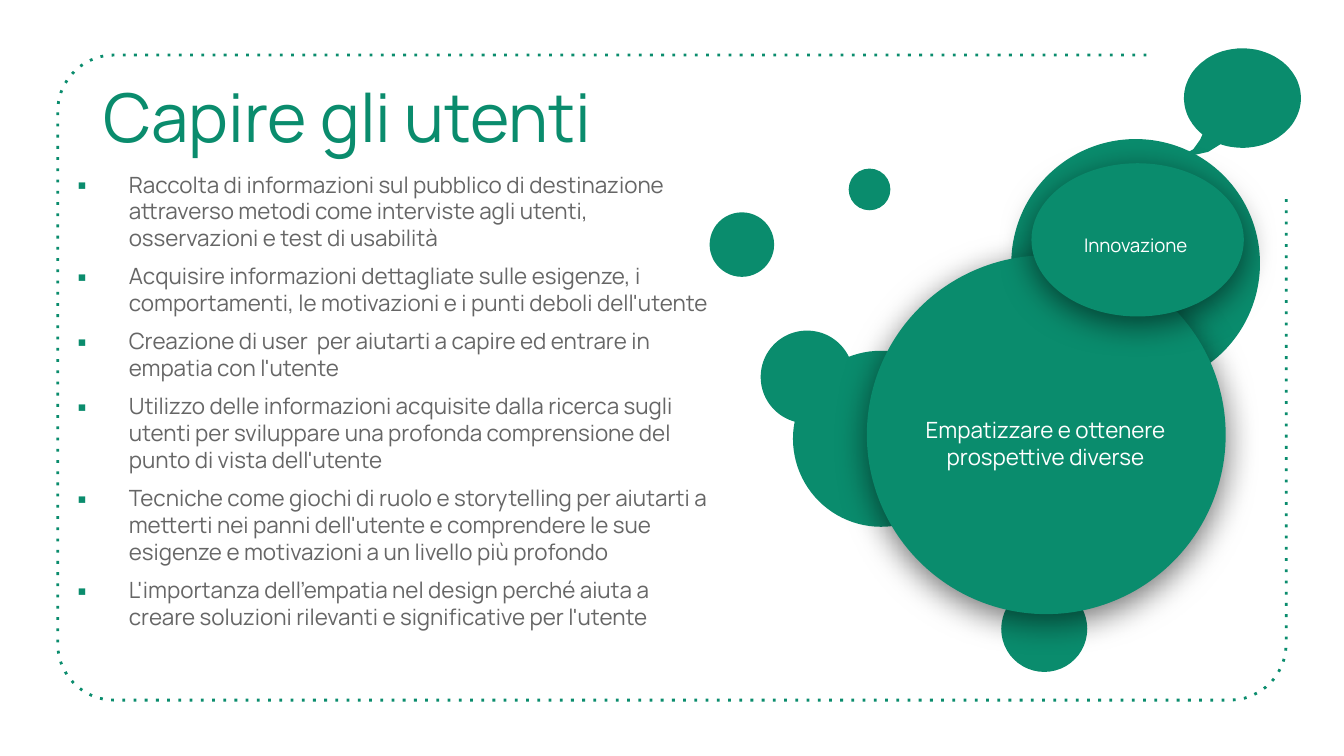
import math
import pptx
import pptx.dml.color
import pptx.enum.dml
import pptx.enum.shapes
import pptx.enum.text
import pptx.oxml
import pptx.oxml.ns
import pptx.util

Inches, Pt = pptx.util.Inches, pptx.util.Pt
Shape = pptx.enum.shapes.MSO_SHAPE
Align, Anchor = pptx.enum.text.PP_ALIGN, pptx.enum.text.MSO_ANCHOR
GREEN = pptx.dml.color.RGBColor(0x0A, 0x8C, 0x6D)
GREY = pptx.dml.color.RGBColor(0x66, 0x66, 0x66)
WHITE = pptx.dml.color.RGBColor(0xFF, 0xFF, 0xFF)
FONT = "Manrope"
NS = pptx.oxml.ns.nsdecls("a")

# Content
TITLE = "Capire gli utenti"
POINTS = [
    "Raccolta di informazioni sul pubblico di destinazione attraverso metodi come interviste agli utenti, osservazioni e test di usabilità",
    "Acquisire informazioni dettagliate sulle esigenze, i comportamenti, le motivazioni e i punti deboli dell'utente",
    "Creazione di user  per aiutarti a capire ed entrare in empatia con l'utente",
    "Utilizzo delle informazioni acquisite dalla ricerca sugli utenti per sviluppare una profonda comprensione del punto di vista dell'utente",
    "Tecniche come giochi di ruolo e storytelling per aiutarti a metterti nei panni dell'utente e comprendere le sue esigenze e motivazioni a un livello più profondo",
    "L'importanza dell'empatia nel design perché aiuta a creare soluzioni rilevanti e significative per l'utente",
]
# Plain circles: left, top, diameter, outlined
DOTS = [
    (7.45, 4.36, 0.64, False),
    (5.28, 1.58, 0.48, False),
    (5.9, 2.61, 1.31, False),
    (7.53, 1.04, 1.84, True),
    (5.66, 2.46, 0.69, False),
    (6.32, 1.26, 0.3, True),
]
# Raised ovals: box, label box, label, text size, outlined
OVALS = [
    ((6.45, 1.9, 2.67, 2.67), (6.76, 2.66, 2.04, 1.27),
     "Empatizzare e ottenere prospettive diverse", 12, False),
    ((7.68, 1.22, 1.57, 1.13), (7.85, 1.52, 1.2, 0.6),
     "Innovazione", 10, True),
]

# Widescreen slide, 16 to 9
deck = pptx.Presentation()
deck.slide_width = Inches(10)
deck.slide_height = deck.slide_width * 9 // 16
slide = deck.slides.add_slide(deck.slide_layouts[5])
shapes = slide.shapes


def write(shape, lines, size, color, align=Align.LEFT, anchor=Anchor.TOP, bullet=None):
    """Fill a shape with one paragraph per line of text."""
    frame = shape.text_frame
    frame.word_wrap = True
    frame.auto_size = pptx.enum.text.MSO_AUTO_SIZE.NONE
    frame.vertical_anchor = anchor
    frame.margin_left = frame.margin_right = Inches(0.1)
    frame.margin_top = frame.margin_bottom = Inches(0.1)
    for i, line in enumerate(lines):
        para = frame.paragraphs[0] if i == 0 else frame.add_paragraph()
        para.alignment = align
        run = para.add_run()
        run.text = line
        run.font.size, run.font.name = Pt(size), FONT
        run.font.color.rgb = color
        if bullet:
            para.space_before = Pt(6)
            props = para._p.get_or_add_pPr()
            props.set("marL", str(Inches(0.5)))
            props.set("indent", str(Inches(-0.38)))
            for tag in (f'<a:buClr {NS}><a:srgbClr val="{GREEN}"/></a:buClr>',
                        f'<a:buFont {NS} typeface="{FONT}"/>',
                        f'<a:buChar {NS} char="{bullet}"/>'):
                props.append(pptx.oxml.parse_xml(tag))


def paint(shape, lined=False):
    """Make a shape green, with or without an outline."""
    shape.shadow.inherit = False
    shape.fill.solid()
    shape.fill.fore_color.rgb = GREEN
    if lined:
        shape.line.color.rgb = GREEN
        shape.line.width = Pt(0.75)
    else:
        shape.line.fill.background()
    return shape


def add(kind, box, lined=False):
    return paint(shapes.add_shape(kind, *map(Inches, box)), lined)


def lift(shape):
    """Give a shape a soft shadow below it."""
    glow = shape._element.spPr.find(pptx.oxml.ns.qn("a:effectLst"))
    glow.append(pptx.oxml.parse_xml(
        f'<a:outerShdw {NS} blurRad="{Pt(18)}" dist="{Pt(4)}" dir="5400000" '
        'algn="bl" rotWithShape="0"><a:srgbClr val="000000">'
        '<a:alpha val="55000"/></a:srgbClr></a:outerShdw>'))


def arc(x, y, wide, high, start, end, step):
    """Points along an ellipse; angles run clockwise from the right."""
    turns = [math.radians(start + i * step) for i in range((end - start) // step + 1)]
    return [(x + wide * math.cos(t), y + high * math.sin(t)) for t in turns]


def trace(points, close):
    """Draw an outline through points given in inches."""
    mils = [(round(x * 1000), round(y * 1000)) for x, y in points]
    build = shapes.build_freeform(*mils[0], scale=914.4)
    build.add_line_segments(mils[1:], close=close)
    return build.convert_to_shape()


# Dotted frame, open at the top right
LEFT, TOP, RIGHT, BASE, BEND = 0.43, 0.41, 9.57, 5.21, 0.42
BENDS = [
    (LEFT + BEND, TOP + BEND, 270),
    (LEFT + BEND, BASE - BEND, 180),
    (RIGHT - BEND, BASE - BEND, 90),
]
edge = [(8.53, TOP)]
for x, y, turn in BENDS:
    edge += arc(x, y, BEND, BEND, turn, turn - 90, -5)
frame = trace(edge + [(RIGHT, 1.46)], False)
frame.shadow.inherit = False
frame.fill.background()
frame.line.color.rgb = GREEN
frame.line.width = Pt(1.5)
frame.line.dash_style = pptx.enum.dml.MSO_LINE.ROUND_DOT
frame.line._ln.find(pptx.oxml.ns.qn("a:prstDash")).set("val", "dot")

# Title
title = shapes.title
title.left, title.top, title.width, title.height = map(Inches, (0.67, 0.46, 7.51, 0.94))
write(title, [TITLE], 36, GREEN)

# Bullet list
body = shapes.add_textbox(*map(Inches, (0.36, 1.17, 5.02, 2.59)))
write(body, POINTS, 12, GREY, bullet="▪")

# Speech bubble: an oval with a tail at the lower left
TAIL = [(8.99, 1.13), (8.9, 1.15), (8.81, 1.15), (8.88, 1.11), (8.93, 1.04)]
paint(trace(arc(9.245, 0.73, 0.435, 0.37, 133, 472, 3) + TAIL, True))

# Plain circles
for x, y, size, lined in DOTS:
    add(Shape.OVAL, (x, y, size, size), lined)

# Raised ovals with labels
for box, spot, label, size, lined in OVALS:
    lift(add(Shape.OVAL, box, lined))
    write(add(Shape.RECTANGLE, spot, lined), [label], size, WHITE,
          align=Align.CENTER, anchor=Anchor.MIDDLE)

deck.save("out.pptx")
